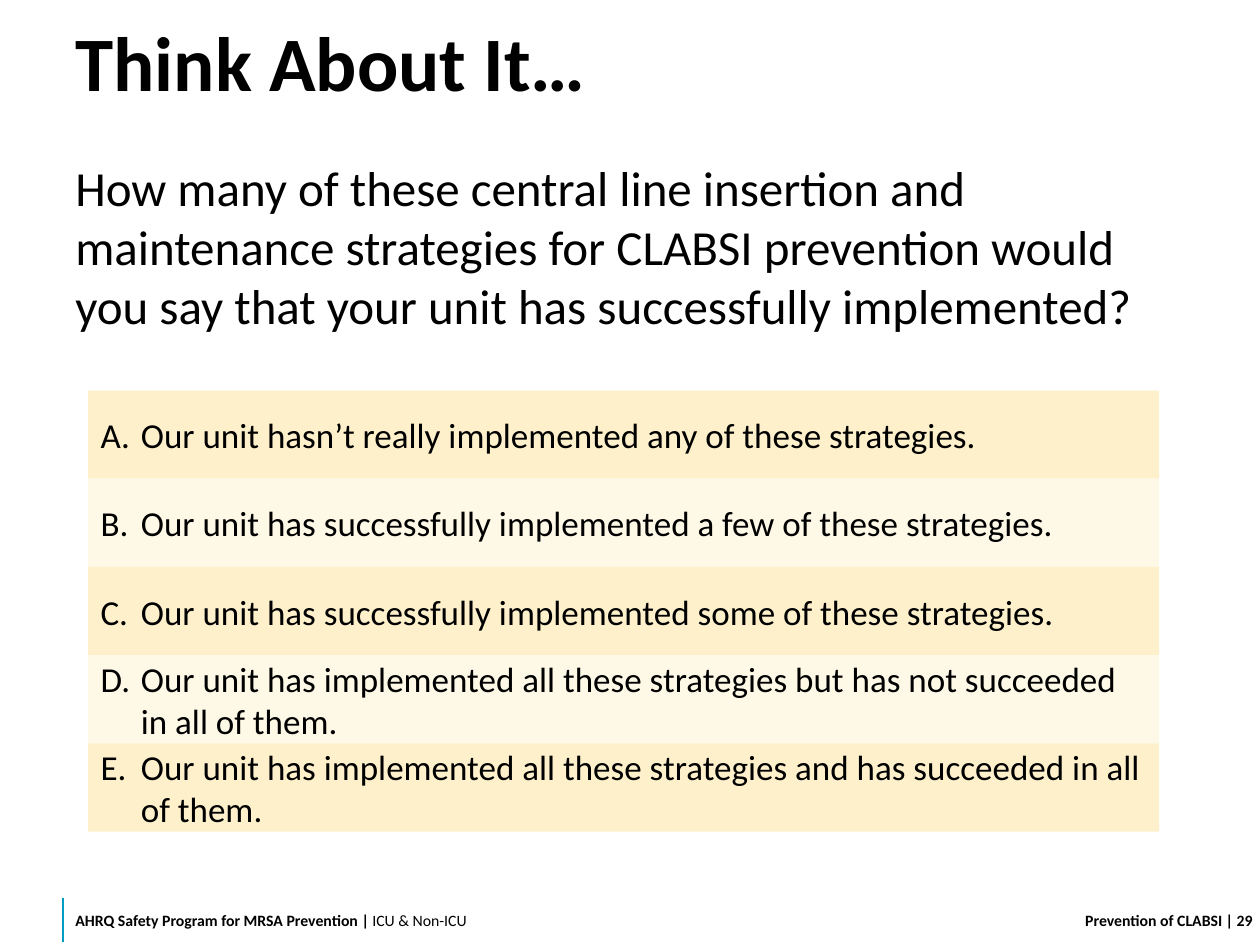
import pptx
import pptx.dml.color
import pptx.enum.shapes
import pptx.enum.text
import pptx.oxml.ns
import pptx.util
from dataclasses import dataclass
from lxml import etree

EMU_PER_PX = 9144  # 100 px to the inch
ALIGN = pptx.enum.text.PP_ALIGN
ANCHOR = pptx.enum.text.MSO_ANCHOR


@dataclass(frozen=True)
class Theme:
    font: str = "Calibri"
    ink: str = "000000"
    rule: str = "009EC2"
    bands: tuple[str, str] = ("FDF0CB", "FEF8E7")
    title_size: int = 44
    question_size: int = 28
    answer_size: int = 20
    footer_size: int = 9


@dataclass(frozen=True)
class Box:
    left: int
    top: int
    width: int
    height: int


@dataclass(frozen=True)
class Span:
    text: str
    bold: bool = False


@dataclass(frozen=True)
class Label:
    box: Box
    spans: tuple[Span, ...]
    size: int
    insets: tuple[int, int, int, int] = (10, 5, 10, 5)
    anchor: ANCHOR = ANCHOR.MIDDLE
    align: ALIGN = ALIGN.LEFT
    line_spacing: float = 1.0


THEME = Theme()


def px(length: int) -> pptx.util.Emu:
    return pptx.util.Emu(length * EMU_PER_PX)


def rgb(value: str) -> pptx.dml.color.RGBColor:
    return pptx.dml.color.RGBColor.from_string(value)


def apply(target, values: dict) -> None:
    for name, value in values.items():
        setattr(target, name, value)


def edges(box: Box) -> tuple[pptx.util.Emu, ...]:
    return px(box.left), px(box.top), px(box.width), px(box.height)


def write(shape, label: Label):
    """Fill a shape with the label's text and return its paragraph."""
    left, top, right, bottom = map(px, label.insets)
    apply(shape.text_frame, {
        "word_wrap": True,
        "auto_size": pptx.enum.text.MSO_AUTO_SIZE.NONE,
        "vertical_anchor": label.anchor,
        "margin_left": left, "margin_top": top,
        "margin_right": right, "margin_bottom": bottom,
    })
    paragraph = shape.text_frame.paragraphs[0]
    apply(paragraph, {"alignment": label.align, "line_spacing": label.line_spacing})
    for span in label.spans:
        run = paragraph.add_run()
        run.text = span.text
        apply(run.font, {"name": THEME.font, "size": pptx.util.Pt(label.size),
                         "bold": span.bold})
        run.font.color.rgb = rgb(THEME.ink)
    return paragraph


def add_title(slide, label: Label) -> None:
    title = slide.shapes.title
    apply(title, dict(zip(("left", "top", "width", "height"), edges(label.box))))
    write(title, label)


def add_label(slide, label: Label) -> None:
    write(slide.shapes.add_textbox(*edges(label.box)), label)


def add_answer(slide, label: Label, band: str, hang: int) -> None:
    """Draw one answer band with its letter hanging left of the text."""
    answer = slide.shapes.add_shape(
        pptx.enum.shapes.MSO_SHAPE.RECTANGLE, *edges(label.box))
    answer.shadow.inherit = False
    answer.fill.solid()
    answer.fill.fore_color.rgb = rgb(band)
    answer.line.fill.background()
    properties = write(answer, label)._p.get_or_add_pPr()
    properties.set("marL", str(px(hang)))
    properties.set("indent", str(-px(hang)))


def add_footer_rule(slide, x: int, top: int, bottom: int) -> None:
    rule = slide.shapes.add_connector(
        pptx.enum.shapes.MSO_CONNECTOR.STRAIGHT, px(x), px(top), px(x), px(bottom))
    rule.line.color.rgb = rgb(THEME.rule)
    rule.line.width = pptx.util.Pt(1)
    etree.SubElement(rule._element.spPr, pptx.oxml.ns.qn("a:effectLst"))


TITLE = Label(Box(50, 0, 900, 100), (Span("Think About It…", True),),
              THEME.title_size, insets=(10, 10, 10, 5), line_spacing=0.9)

QUESTION = Label(
    Box(50, 120, 900, 164),
    (Span("How many of these central line insertion and maintenance strategies for "
          "CLABSI prevention would you say that your unit has successfully "
          "implemented?"),),
    THEME.question_size, anchor=ANCHOR.TOP)

ANSWERS = (
    "Our unit hasn’t really implemented any of these strategies.",
    "Our unit has successfully implemented a few of these strategies.",
    "Our unit has successfully implemented some of these strategies.",
    "Our unit has implemented all these strategies but has not succeeded in all of them.",
    "Our unit has implemented all these strategies and has succeeded in all of them.",
)
FIRST_ANSWER = Box(70, 310, 850, 70)
ANSWER_HANG = 32

FOOTERS = (
    Label(Box(50, 710, 410, 40),
          (Span("AHRQ Safety Program for MRSA Prevention | ", True),
           Span("ICU & Non-ICU")),
          THEME.footer_size, insets=(10, 0, 10, 0)),
    Label(Box(710, 710, 260, 40), (Span("Prevention of CLABSI", True),),
          THEME.footer_size, insets=(10, 5, 0, 5), align=ALIGN.RIGHT),
    Label(Box(970, 710, 30, 40), (Span(" | 29", True),),
          THEME.footer_size, insets=(0, 5, 0, 5)),
)


def main() -> None:
    deck = pptx.Presentation()
    apply(deck, {"slide_width": px(1000), "slide_height": px(750)})
    slide = deck.slides.add_slide(deck.slide_layouts.get_by_name("Title Only"))

    # Title and question
    add_title(slide, TITLE)
    add_label(slide, QUESTION)

    # Lettered answers in alternating bands
    first = FIRST_ANSWER
    for row, (letter, answer) in enumerate(zip("ABCDE", ANSWERS)):
        box = Box(first.left, first.top + row * first.height, first.width, first.height)
        label = Label(box, (Span(f"{letter}.\t{answer}"),), THEME.answer_size)
        add_answer(slide, label, THEME.bands[row % 2], ANSWER_HANG)

    # Footer
    add_footer_rule(slide, 50, 713, 748)
    for footer in FOOTERS:
        add_label(slide, footer)

    deck.save("out.pptx")


if __name__ == "__main__":
    main()
